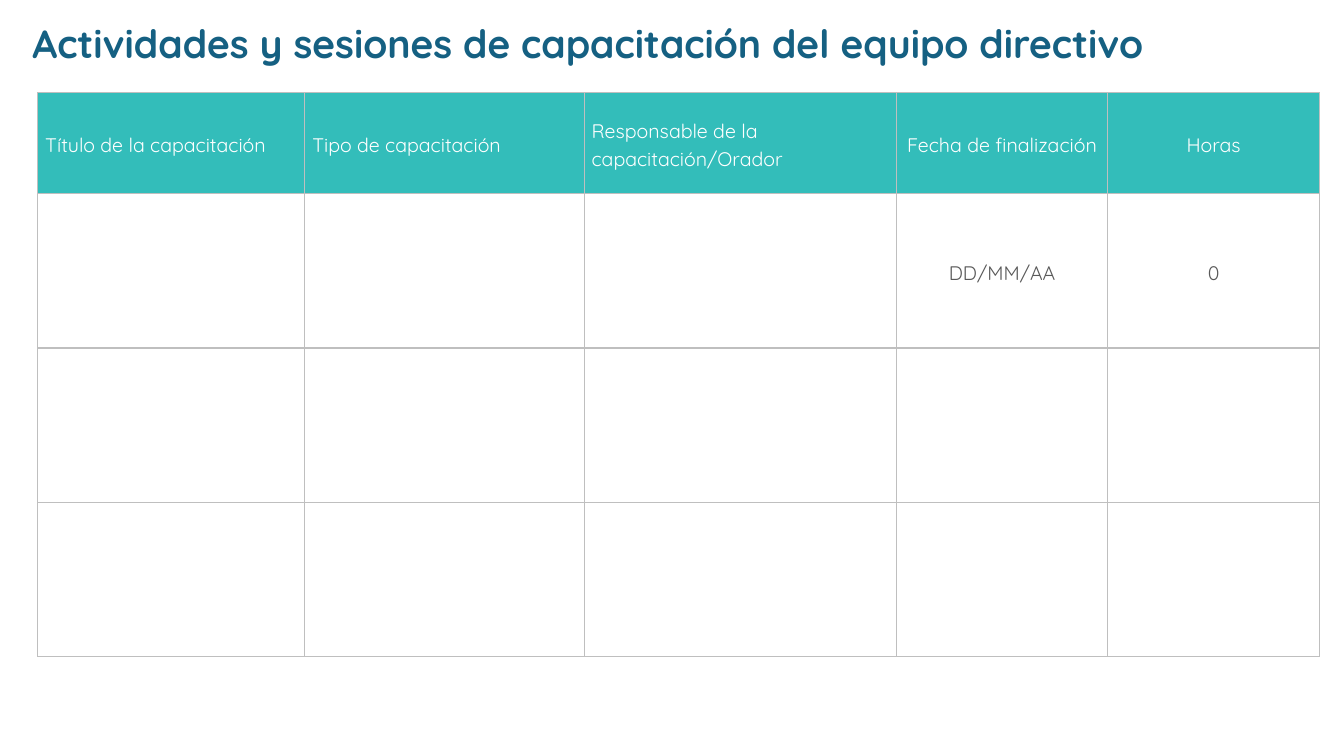
from lxml.etree import SubElement
from pptx import Presentation
from pptx.dml.color import RGBColor
from pptx.enum.text import MSO_ANCHOR, MSO_AUTO_SIZE, PP_ALIGN
from pptx.oxml.ns import qn
from pptx.util import Cm, Pt

FONT = "Quicksand"
BLUE, TEAL, WHITE = "156082", "33BDBA", "FFFFFF"
DARK_GRAY, BORDER_GRAY = "595959", "BFBFBF"

COLUMN_WIDTHS = [6.73, 7.04, 7.87, 5.33, 5.33]
ROW_HEIGHTS = [2.54, 3.89, 3.89, 3.89]
FIRST_CENTERED_COLUMN = 3
TRAININGS = [
    ["Título de la capacitación", "Tipo de capacitación",
     "Responsable de la capacitación/Orador", "Fecha de finalización", "Horas"],
    ["", "", "", "DD/MM/AA", "0"],
    [""] * 5,
    [""] * 5,
]


def color(hex_code):
    return RGBColor.from_string(hex_code)


def format_runs(paragraph, size, hex_code, bold=False):
    for run in paragraph.runs:
        run.font.name = FONT
        run.font.size = Pt(size)
        run.font.bold = bold
        run.font.color.rgb = color(hex_code)


def add_heading(slide, text):
    heading = slide.shapes.title
    heading.left, heading.top = Cm(0.56), Cm(0.36)
    heading.width, heading.height = Cm(33.2), Cm(1.45)
    frame = heading.text_frame
    frame.text = text
    frame.word_wrap = True
    frame.auto_size = MSO_AUTO_SIZE.NONE
    frame.vertical_anchor = MSO_ANCHOR.MIDDLE
    frame.paragraphs[0].alignment = PP_ALIGN.LEFT
    format_runs(frame.paragraphs[0], 28, BLUE, bold=True)


def set_borders(cell):
    properties = cell._tc.get_or_add_tcPr()
    for side in ("a:lnL", "a:lnR", "a:lnT", "a:lnB"):
        line = SubElement(properties, qn(side), w=str(Pt(1)))
        fill = SubElement(line, qn("a:solidFill"))
        SubElement(fill, qn("a:srgbClr"), val=BORDER_GRAY)


def fill_cell(cell, text, is_header, centered):
    # Borders go before the fill in the cell properties
    set_borders(cell)
    cell.fill.solid()
    cell.fill.fore_color.rgb = color(TEAL if is_header else WHITE)
    cell.vertical_anchor = MSO_ANCHOR.MIDDLE
    cell.margin_left = cell.margin_right = Cm(0.19)
    cell.margin_top = cell.margin_bottom = Cm(0)

    cell.text_frame.text = text
    paragraph = cell.text_frame.paragraphs[0]
    paragraph.alignment = PP_ALIGN.CENTER if centered else PP_ALIGN.LEFT
    paragraph.line_spacing = 1.15
    paragraph.space_after = Pt(8)
    format_runs(paragraph, 14, WHITE if is_header else DARK_GRAY)


def add_training_table(slide):
    training_table = slide.shapes.add_table(
        len(ROW_HEIGHTS), len(COLUMN_WIDTHS), Cm(0.95), Cm(2.34),
        Cm(sum(COLUMN_WIDTHS)), Cm(sum(ROW_HEIGHTS))).table
    training_table.horz_banding = False
    training_table.first_row = False

    for column, width in zip(training_table.columns, COLUMN_WIDTHS):
        column.width = Cm(width)
    for row, height in zip(training_table.rows, ROW_HEIGHTS):
        row.height = Cm(height)

    for row_index, training in enumerate(TRAININGS):
        for column_index, text in enumerate(training):
            fill_cell(training_table.cell(row_index, column_index), text,
                      is_header=row_index == 0,
                      centered=column_index >= FIRST_CENTERED_COLUMN)


def main():
    presentation = Presentation()
    presentation.slide_width, presentation.slide_height = Cm(33.87), Cm(19.05)
    slide = presentation.slides.add_slide(presentation.slide_layouts[5])

    # Title
    add_heading(slide, "Actividades y sesiones de capacitación del equipo directivo")

    # Training log
    add_training_table(slide)

    presentation.save("out.pptx")


if __name__ == "__main__":
    main()
